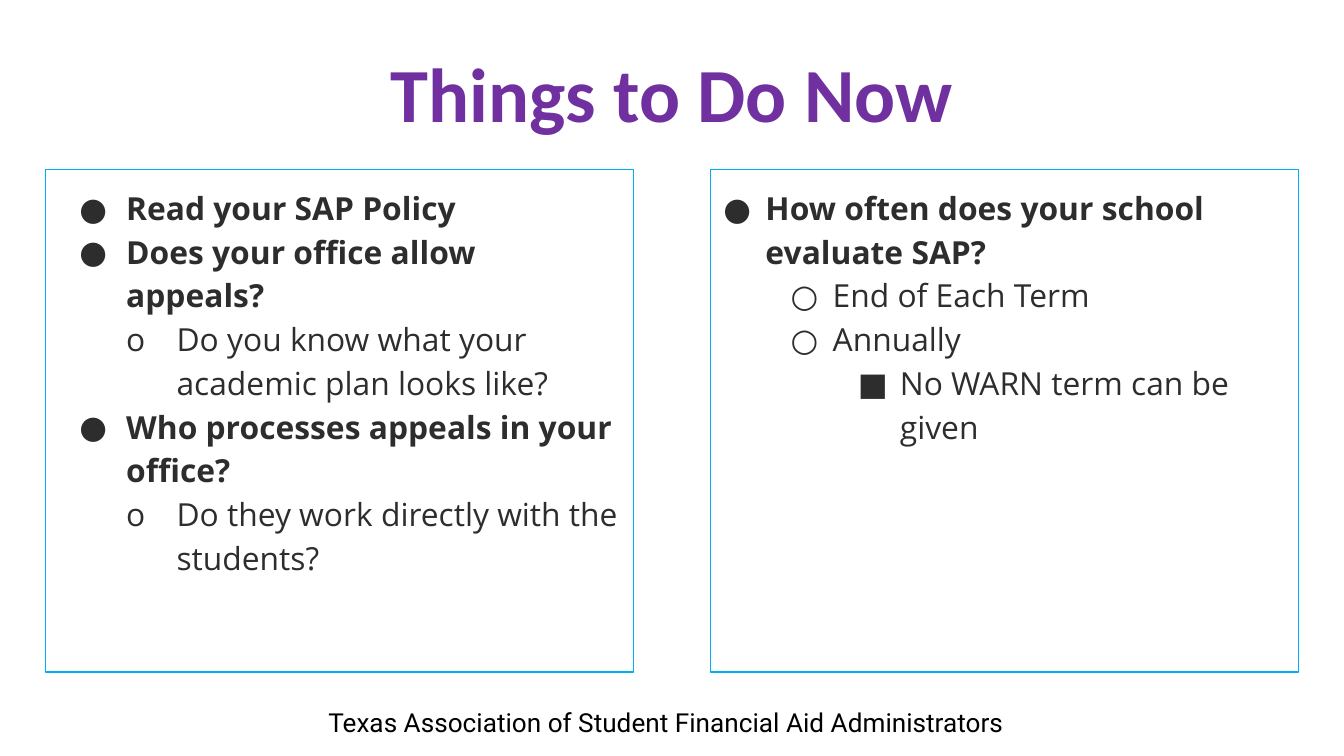
from lxml import etree
from pptx import Presentation
from pptx.dml.color import RGBColor
from pptx.enum.shapes import MSO_SHAPE
from pptx.enum.text import MSO_ANCHOR, PP_ALIGN
from pptx.oxml.ns import qn
from pptx.util import Pt

RECTANGLE = MSO_SHAPE.RECTANGLE
TOP = MSO_ANCHOR.TOP
LEFT, CENTER = PP_ALIGN.LEFT, PP_ALIGN.CENTER

COLORS = {"title": "7030A0", "body": "2E2D2D", "border": "00B0F0", "footer": "000000"}

TITLE = "Things to Do Now"
FOOTER = "Texas Association of Student Financial Aid Administrators"

# Each level: bullet, text indent, hanging distance. Each item: level, text.
PANELS = [
    {
        "levels": [("●", 36, 25), ("o", 63, 27)],
        "items": [
            (0, "Read your SAP Policy"),
            (0, "Does your office allow appeals?"),
            (1, "Do you know what your academic plan looks like?"),
            (0, "Who processes appeals in your office?"),
            (1, "Do they work directly with the students?"),
        ],
    },
    {
        "levels": [("●", 22.5, 22.5), ("○", 58.5, 22.5), ("■", 94.5, 22.5)],
        "items": [
            (0, "How often does your school evaluate SAP?"),
            (1, "End of Each Term"),
            (1, "Annually"),
            (2, "No WARN term can be given"),
        ],
    },
]

SLIDE_WIDTH, SLIDE_HEIGHT = 720, 405
MARGIN = 24.5
PANEL_TOP, PANEL_WIDTH, PANEL_HEIGHT = 90.8, 315, 269.2
PANEL_STEP = SLIDE_WIDTH - 2 * MARGIN - PANEL_WIDTH
INSET = 7.2


def color(name):
    return RGBColor.from_string(COLORS[name])


def prepare_frame(shape, vertical_inset):
    frame = shape.text_frame
    frame.word_wrap = True
    frame.vertical_anchor = TOP
    frame.margin_left = frame.margin_right = Pt(INSET)
    frame.margin_top = frame.margin_bottom = Pt(vertical_inset)
    return frame


def add_run(paragraph, text, font_name, size, color_name, bold=False):
    run = paragraph.add_run()
    run.text = text
    run.font.name = font_name
    run.font.size = Pt(size)
    run.font.bold = bold
    run.font.color.rgb = color(color_name)


def set_bullet(paragraph, bullet, indent, hanging):
    properties = paragraph._p.get_or_add_pPr()
    properties.set("marL", str(Pt(indent)))
    properties.set("indent", str(-Pt(hanging)))
    bullet_color = etree.SubElement(properties, qn("a:buClr"))
    etree.SubElement(bullet_color, qn("a:srgbClr"), val=COLORS["body"])
    etree.SubElement(properties, qn("a:buFont"), typeface="Open Sans")
    etree.SubElement(properties, qn("a:buChar"), char=bullet)


def add_panel(slide, left, panel):
    shape = slide.shapes.add_shape(
        RECTANGLE, Pt(left), Pt(PANEL_TOP), Pt(PANEL_WIDTH), Pt(PANEL_HEIGHT))
    shape.shadow.inherit = False
    shape.fill.background()
    shape.line.color.rgb = color("border")
    shape.line.width = Pt(0.75)
    frame = prepare_frame(shape, INSET)
    for index, (level, text) in enumerate(panel["items"]):
        paragraph = frame.add_paragraph() if index else frame.paragraphs[0]
        paragraph.level = level
        paragraph.alignment = LEFT
        paragraph.line_spacing = 1.15
        set_bullet(paragraph, *panel["levels"][level])
        add_run(paragraph, text, "Open Sans", 17, "body", bold=level == 0)


presentation = Presentation()
presentation.slide_width = Pt(SLIDE_WIDTH)
presentation.slide_height = Pt(SLIDE_HEIGHT)
slide = presentation.slides.add_slide(presentation.slide_layouts[6])

title_box = slide.shapes.add_textbox(
    Pt(MARGIN), Pt(17.5), Pt(SLIDE_WIDTH - 2 * MARGIN), Pt(45))
title = prepare_frame(title_box, INSET).paragraphs[0]
title.alignment = CENTER
add_run(title, TITLE, "Calibri", 41, "title", bold=True)

for column, panel in enumerate(PANELS):
    add_panel(slide, MARGIN + column * PANEL_STEP, panel)

footer_box = slide.shapes.add_textbox(Pt(168.8), Pt(375), Pt(382), Pt(41))
footer = prepare_frame(footer_box, 3.6).paragraphs[0]
add_run(footer, FOOTER, "Roboto", 14, "footer")

presentation.save("out.pptx")
